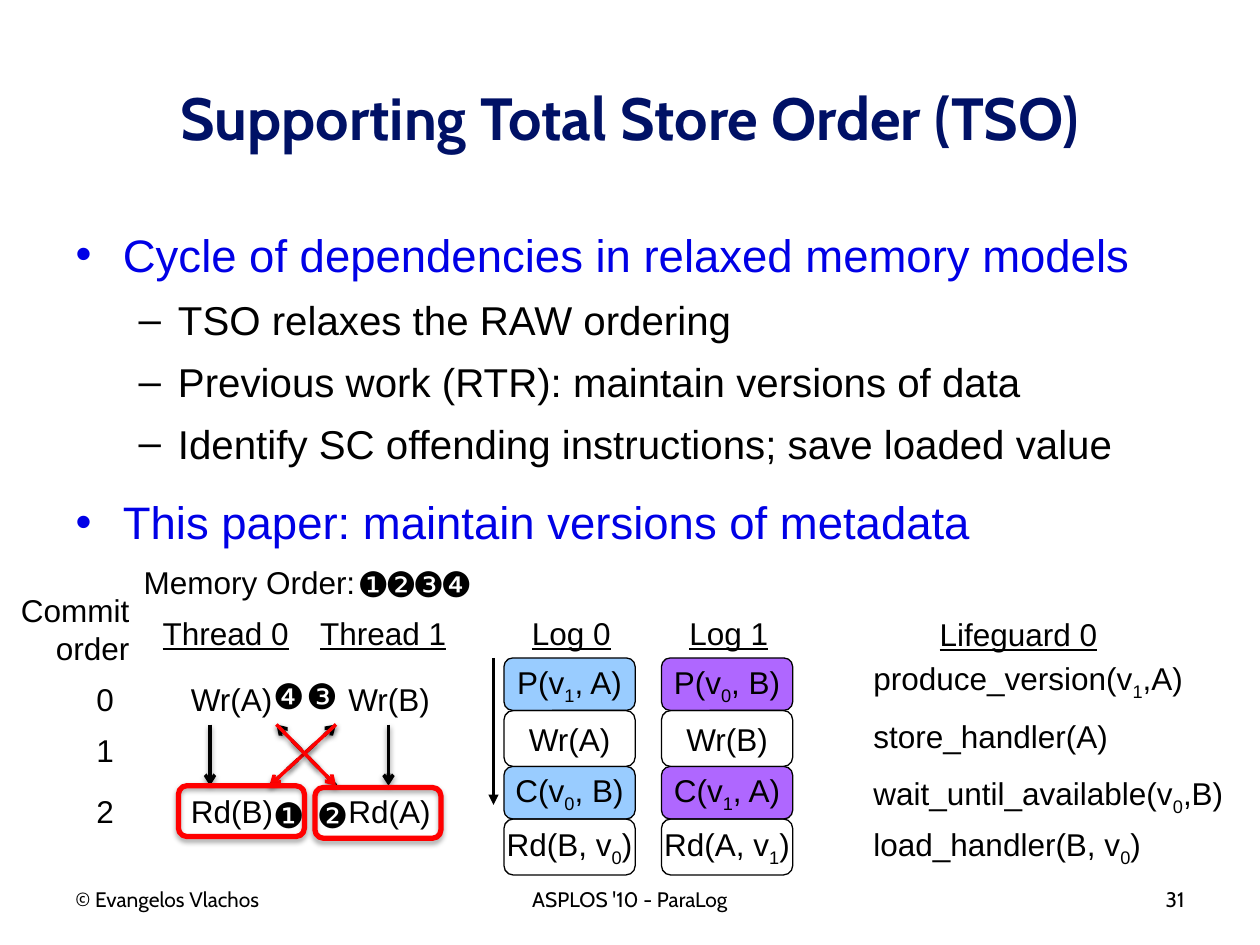
from dataclasses import dataclass

from lxml import etree
from pptx import Presentation
from pptx import util as u
from pptx.dml.color import RGBColor
from pptx.enum import dml, shapes, text
from pptx.oxml.ns import qn

Pt = u.Pt
LEFT, MID, RIGHT = text.PP_ALIGN.LEFT, text.PP_ALIGN.CENTER, text.PP_ALIGN.RIGHT


@dataclass(frozen=True)
class Theme:
    navy: str = "001166"
    blue: str = "0000E6"
    black: str = "000000"
    red: str = "FF0000"
    sky: str = "99CCFF"
    violet: str = "AF67FF"
    head: str = "Cabin"
    body: str = "Arial"
    title: float = 34
    point: float = 26
    sub: float = 23
    mark: float = 20
    label: float = 18
    foot: float = 12


T = Theme()


def write(par, words, size=T.label, color=T.black, font=T.body, bold=False,
          line=False, align=LEFT):
    """Fill a paragraph; parts between bars are subscripts."""
    par.alignment = align
    for i, part in enumerate(words.split("|")):
        run = par.add_run()
        run.text = part
        f = run.font
        f.size, f.name, f.bold, f.underline = Pt(size), font, bold, line
        f.color.rgb = RGBColor.from_string(color)
        if i % 2:
            run._r.get_or_add_rPr().set("baseline", "-25000")


def label(slide, box, *lines, **fmt):
    frame = slide.shapes.add_textbox(*map(Pt, box)).text_frame
    frame.word_wrap = True
    for i, words in enumerate(lines):
        par = frame.add_paragraph() if i else frame.paragraphs[0]
        write(par, words, **fmt)


def shade(item, alpha=None, dist=1.6):
    """Give a soft shadow below, or none at all."""
    props = item._element.spPr
    for old in props.findall(qn("a:effectLst")):
        props.remove(old)
    fx = etree.SubElement(props, qn("a:effectLst"))
    if alpha:
        cast = etree.SubElement(
            fx, qn("a:outerShdw"), blurRad=str(Pt(3.1)), dist=str(Pt(dist)),
            dir="5400000", rotWithShape="0")
        tint = etree.SubElement(cast, qn("a:srgbClr"), val=T.black)
        etree.SubElement(tint, qn("a:alpha"), val=str(alpha * 1000))


def arrow(slide, start, end, color=T.black, width=2, dash=False,
          tip="arrow", alpha=38):
    line = slide.shapes.add_connector(
        shapes.MSO_CONNECTOR.STRAIGHT, *map(Pt, (*start, *end)))
    line.line.color.rgb = RGBColor.from_string(color)
    line.line.width = Pt(width)
    if dash:
        line.line.dash_style = dml.MSO_LINE.DASH
    etree.SubElement(line.line._get_or_add_ln(), qn("a:tailEnd"), type=tip)
    shade(line, alpha)


def block(slide, box, words="", fill=None, edge=T.black, width=0.75, alpha=None):
    item = slide.shapes.add_shape(
        shapes.MSO_SHAPE.ROUNDED_RECTANGLE, *map(Pt, box))
    if fill:
        item.fill.solid()
        item.fill.fore_color.rgb = RGBColor.from_string(fill)
    else:
        item.fill.background()
    item.line.color.rgb = RGBColor.from_string(edge)
    item.line.width = Pt(width)
    shade(item, alpha, dist=1.8)
    if words:
        frame = item.text_frame
        frame.word_wrap = False
        frame.vertical_anchor = text.MSO_ANCHOR.MIDDLE
        write(frame.paragraphs[0], words, align=MID)


def place(item, box):
    item.left, item.top, item.width, item.height = map(Pt, box)
    item.text_frame.auto_size = text.MSO_AUTO_SIZE.NONE
    return item.text_frame


def title(slide, box, words):
    frame = place(slide.shapes.title, box)
    frame.vertical_anchor = text.MSO_ANCHOR.MIDDLE
    write(frame.paragraphs[0], words, size=T.title, color=T.navy,
          font=T.head, bold=True, align=MID)


def points(slide, box, items):
    frame = place(slide.placeholders[1], box)
    for i, (level, words) in enumerate(items):
        par = frame.add_paragraph() if i else frame.paragraphs[0]
        par.level = level
        par.space_before = Pt((7.8 if level else 15.6) if i else 0)
        write(par, words, size=T.sub if level else T.point,
              color=T.black if level else T.blue)


def threads(slide, box):
    x, y = box[:2]
    rows = [y + 67, y + 96, y + 131]
    cols = [x + 102, x + 192]
    top, end = rows[1:]

    # Crossing dependencies, dashed one way and red the other
    for a, b in ((154, 192), (192, 158)):
        low, high = (x + a, end), (x + b, top)
        arrow(slide, low, high, dash=True)
        arrow(slide, high, low, color=T.red)

    # Commit order
    label(slide, (x, y + 16, 81, 51), "Commit", "order", align=RIGHT)
    for i, row in enumerate(rows):
        label(slide, (x + 48, row, 25, 29), str(i))

    # Program order in each thread
    for i, (col, ops) in enumerate(zip(cols, (("Wr(A)", "Rd(B)"),
                                              ("Wr(B)", "Rd(A)")))):
        label(slide, (x + 84 + 90 * i, y + 29.5, 90, 29), f"Thread {i}",
              line=True, align=MID)
        for row, op in zip((rows[0], end), ops):
            label(slide, (col, row, 70, 29), op)
        mid = x + 120 + 102 * i
        arrow(slide, (mid, top), (mid, end))
        block(slide, (x + 102 + 78 * i, end + i, 72, 29),
              edge=T.red, width=3, alpha=35)

    # Memory order
    label(slide, (x + 75, y, 170, 29), "Memory Order:")
    spots = [(197.3 + 15.8 * i, 0) for i in range(4)]
    spots += [(149, 132), (174, 132), (168, 64), (149, 64)]
    for (dx, dy), mark in zip(spots, "❶❷❸❹" * 2):
        label(slide, (x + dx, y + dy, 31, 30), mark, size=T.mark)


def logs(slide, box):
    x, y = box[:2]
    arrow(slide, (x, y + 29), (x, y + 113), width=1.25, tip="triangle",
          alpha=None)
    cols = ((T.sky, ("P(v|1|, A)", "Wr(A)", "C(v|0|, B)", "Rd(B, v|0|)")),
            (T.violet, ("P(v|0|, B)", "Wr(B)", "C(v|1|, A)", "Rd(A, v|1|)")))
    for i, (fill, ops) in enumerate(cols):
        left, top = x + 6 + 90 * i, y + 29
        label(slide, (left + 1, y + 0.5, 75, 29), f"Log {i}", line=True,
              align=MID)
        for j, op in enumerate(ops):
            high = 32 if j % 2 else 30
            block(slide, (left, top, 75, high), op, fill=None if j % 2 else fill)
            top += high


def guard(slide, box):
    x, y, w = box[:3]
    label(slide, (x + 30, y, 120, 29), "Lifeguard 0", line=True, align=MID)
    calls = ("produce_version(v|1|,A)", "store_handler(A)",
             "wait_until_available(v|0|,B)", "load_handler(B, v|0|)")
    for dy, call in zip((25, 58, 91, 120), calls):
        label(slide, (x, y + dy, w, 29), call)


def footer(slide, box):
    x, y, w, h = box
    for words, align in (("© Evangelos Vlachos", LEFT),
                         ("ASPLOS '10 - ParaLog", MID), ("31", RIGHT)):
        label(slide, (x, y, w / 3, h), words, size=T.foot, font=T.head,
              align=align)
        x += w / 3


def main():
    deck = Presentation()
    deck.slide_width, deck.slide_height = Pt(720), Pt(540)
    slide = deck.slides.add_slide(deck.slide_layouts[1])
    title(slide, (36, 21.6, 648, 90), "Supporting Total Store Order (TSO)")
    points(slide, (36, 126, 648, 194), (
        (0, "Cycle of dependencies in relaxed memory models"),
        (1, "TSO relaxes the RAW ordering"),
        (1, "Previous work (RTR): maintain versions of data"),
        (1, "Identify SC offending instructions; save loaded value"),
        (0, "This paper: maintain versions of metadata")))
    threads(slide, (0, 318, 276, 170))
    logs(slide, (282, 347, 171, 153))
    guard(slide, (492, 348, 228, 149))
    footer(slide, (36, 503, 648, 37))
    deck.save("out.pptx")


if __name__ == "__main__":
    main()
